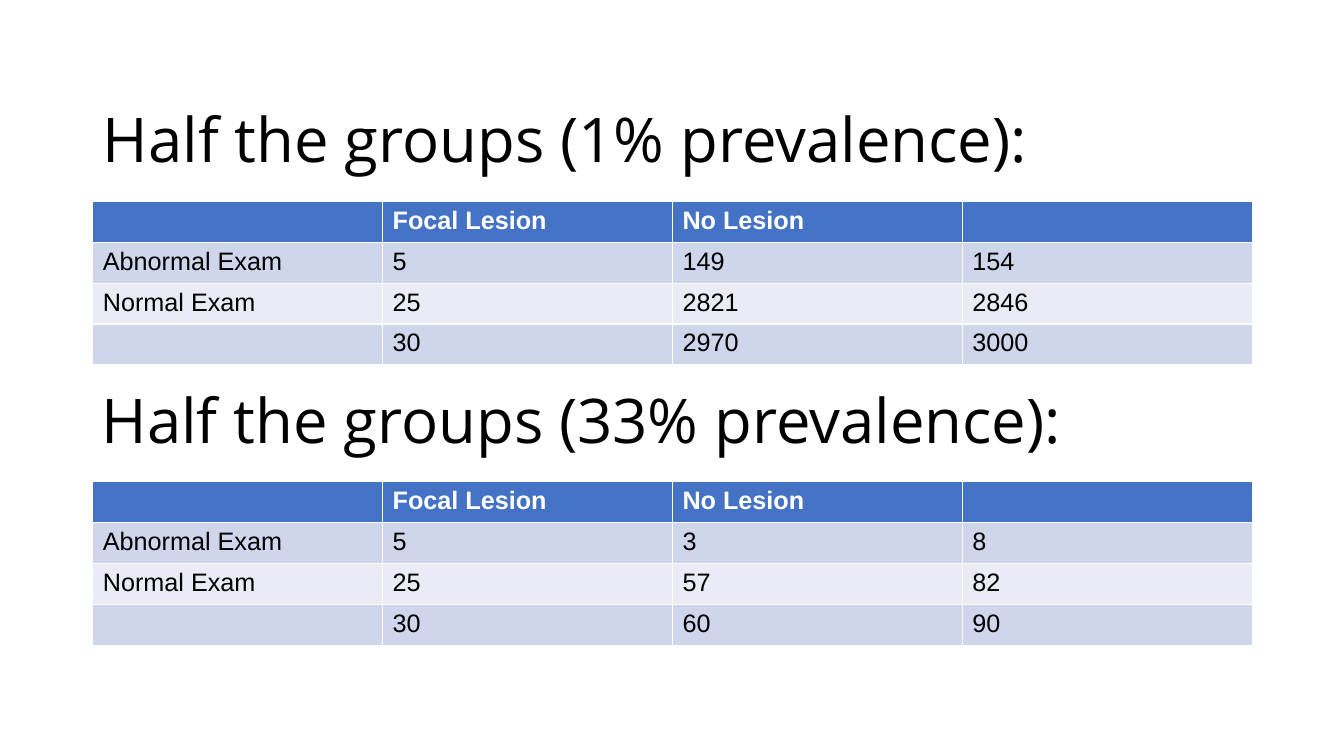
from dataclasses import dataclass

from pptx import Presentation
from pptx.dml.color import RGBColor as Color
from pptx.enum.text import MSO_ANCHOR as Anchor, MSO_AUTO_SIZE as AutoSize, PP_ALIGN as Align
from pptx.util import Inches, Pt


@dataclass(frozen=True)
class Theme:
    heading_font: str = "Open Sans"
    table_font: str = "Arial"
    heading_size: int = 44
    table_size: int = 18
    black: Color = Color(0, 0, 0)
    white: Color = Color(255, 255, 255)
    header: Color = Color.from_string("4472C4")
    bands: tuple = (Color.from_string("CFD5EA"), Color.from_string("E9EBF5"))


theme = Theme()


def add_span(para, text, name, size, color, bold=False):
    span = para.add_run()
    span.text = text
    span.font.name = name
    span.font.size = Pt(size)
    span.font.color.rgb = color
    span.font.bold = bold


def write_heading(box, left, top, text):
    box.left, box.top = Inches(left), Inches(top)
    box.width, box.height = Inches(11.5), Inches(0.87)
    frame = box.text_frame
    frame.word_wrap = True
    frame.auto_size = AutoSize.NONE
    frame.vertical_anchor = Anchor.MIDDLE
    para = frame.paragraphs[0]
    para.alignment = Align.LEFT
    para.line_spacing = 0.9
    add_span(para, text, theme.heading_font, theme.heading_size, theme.black)


# Page
deck = Presentation()
deck.slide_width, deck.slide_height = Inches(13.33), Inches(7.5)
page = deck.slides.add_slide(deck.slide_layouts[5])

# Headings
write_heading(page.shapes.title, 0.92, 0.98, "Half the groups (1% prevalence):")
second_heading = page.shapes.add_textbox(0, 0, 0, 0)
write_heading(second_heading, 0.91, 3.77, "Half the groups (33% prevalence):")

# Exam results: abnormal, normal and total counts for each prevalence
header_row = ("", "Focal Lesion", "No Lesion", "")
row_labels = ("Abnormal Exam", "Normal Exam", "")
results = (
    (2, ((5, 149, 154), (25, 2821, 2846), (30, 2970, 3000))),
    (4.78, ((5, 3, 8), (25, 57, 82), (30, 60, 90))),
)

# Tables: the default table style draws the white rules
for top, counts in results:
    rows = [header_row] + [(label, *values) for label, values in zip(row_labels, counts)]
    table = page.shapes.add_table(
        len(rows), len(header_row), Inches(0.92), Inches(top), Inches(11.5), Inches(1.62)
    ).table
    for row_index, row in enumerate(rows):
        is_header = row_index == 0
        fill = theme.header if is_header else theme.bands[(row_index - 1) % 2]
        color = theme.white if is_header else theme.black
        for column_index, value in enumerate(row):
            cell = table.cell(row_index, column_index)
            cell.fill.solid()
            cell.fill.fore_color.rgb = fill
            if value != "":
                add_span(cell.text_frame.paragraphs[0], str(value),
                         theme.table_font, theme.table_size, color, is_header)

deck.save("out.pptx")
